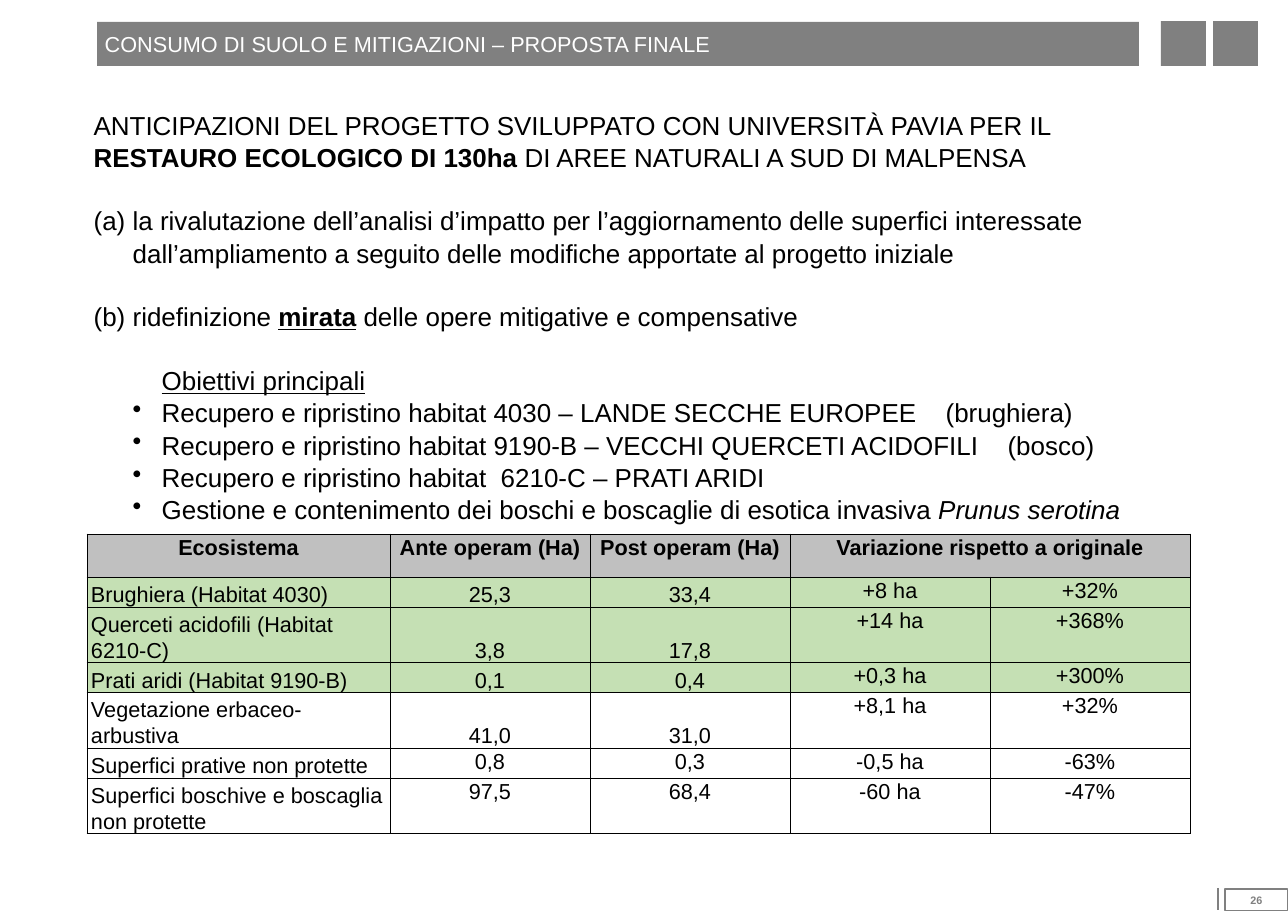
from lxml.etree import SubElement
from pptx import Presentation
from pptx.dml.color import RGBColor
from pptx.enum.shapes import MSO_CONNECTOR, MSO_SHAPE
from pptx.enum.text import MSO_ANCHOR, PP_ALIGN
from pptx.oxml.ns import qn
from pptx.util import Pt

PX = 11738
GREY = RGBColor(0x80, 0x80, 0x80)
SILVER = RGBColor(0xC0, 0xC0, 0xC0)
GREEN = RGBColor(0xC5, 0xE0, 0xB4)
BLACK = RGBColor(0, 0, 0)
WHITE = RGBColor(0xFF, 0xFF, 0xFF)

BODY_SIZE = 24
BODY_SPACING = 1.04
BLANK_LINE = Pt(28.8)
LETTER_INDENT = 39
BULLET_INDENT = 68
BULLET_HANG = 29

BOLD = {"bold": True}
UNDERLINE = {"underline": True}
ITALIC = {"italic": True}

INTRO = [
    ("ANTICIPAZIONI DEL PROGETTO SVILUPPATO CON UNIVERSITÀ PAVIA PER IL", {}),
    ("\n", {}),
    ("RESTAURO ECOLOGICO DI 130ha ", BOLD),
    ("DI AREE NATURALI A SUD DI MALPENSA", {}),
]
LETTERED = [
    [("la rivalutazione dell’analisi d’impatto per l’aggiornamento delle superfici interessate "
      "dall’ampliamento a seguito delle modifiche apportate al progetto iniziale", {})],
    [("ridefinizione ", {}), ("mirata", BOLD | UNDERLINE),
     (" delle opere mitigative e compensative", {})],
]
GOALS = [
    ([("Recupero e ripristino habitat 4030 – LANDE SECCHE EUROPEE\t(brughiera)", {})], 852),
    ([("Recupero e ripristino habitat 9190-B – VECCHI QUERCETI ACIDOFILI\t(bosco)", {})], 914),
    ([("Recupero e ripristino habitat  6210-C – PRATI ARIDI", {})], None),
    ([("Gestione e contenimento dei boschi e boscaglie di esotica invasiva ", {}),
      ("Prunus serotina", ITALIC)], None),
]

HEADINGS = ["Ecosistema", "Ante operam (Ha)", "Post operam (Ha)", "Variazione rispetto a originale"]
ECOSYSTEMS = [
    ["Brughiera (Habitat 4030)", "25,3", "33,4", "+8 ha", "+32%"],
    ["Querceti acidofili (Habitat 6210-C)", "3,8", "17,8", "+14 ha", "+368%"],
    ["Prati aridi (Habitat 9190-B)", "0,1", "0,4", "+0,3 ha", "+300%"],
    ["Vegetazione erbaceo-arbustiva", "41,0", "31,0", "+8,1 ha", "+32%"],
    ["Superfici prative non protette", "0,8", "0,3", "-0,5 ha", "-63%"],
    ["Superfici boschive e boscaglia non protette", "97,5", "68,4", "-60 ha", "-47%"],
]
GREEN_ROWS = 3
BOTTOM_ROWS = 4
COLUMNS = [303, 200, 200, 200, 200]
ROWS = [43] + [30] * len(ECOSYSTEMS)


def px(*values):
    return [value * PX for value in values]


def add_run(p, text, size, color=BLACK, **style):
    r = p.add_run()
    r.text = text
    for name, value in {"name": "Arial", "size": Pt(size), **style}.items():
        setattr(r.font, name, value)
    r.font.color.rgb = color


def add_box(s, box, fill=None, line=None):
    sp = s.shapes.add_shape(MSO_SHAPE.RECTANGLE, *px(*box))
    sp.shadow.inherit = False
    if fill is None:
        sp.fill.background()
    else:
        sp.fill.solid()
        sp.fill.fore_color.rgb = fill
    if line is None:
        sp.line.fill.background()
    else:
        sp.line.color.rgb = line
        sp.line.width = Pt(1)
    return sp


def add_label(sp, text, align, size, color, **style):
    tf = sp.text_frame
    tf.vertical_anchor = MSO_ANCHOR.MIDDLE
    p = tf.paragraphs[0]
    p.alignment = align
    add_run(p, text, size, color, **style)


def add_rule(s, *ends):
    line = s.shapes.add_connector(MSO_CONNECTOR.STRAIGHT, *px(*ends))
    line.line.color.rgb = GREY
    line.line.width = Pt(1)
    SubElement(line._element.spPr, qn("a:effectLst"))


def add_paragraph(tf, runs, left=0, hang=0, before=0, bullet=None, tab=None):
    p = tf.add_paragraph() if tf.paragraphs[0].runs else tf.paragraphs[0]
    p.line_spacing = BODY_SPACING
    p.space_before = before
    pPr = p._p.get_or_add_pPr()
    pPr.set("marL", str(left * PX))
    pPr.set("indent", str(-hang * PX))
    if bullet:
        tag, attributes = bullet
        SubElement(pPr, qn(tag), attributes)
    if tab:
        stops = SubElement(pPr, qn("a:tabLst"))
        SubElement(stops, qn("a:tab"), {"pos": str(tab * PX), "algn": "l"})
    for text, style in runs:
        if text == "\n":
            p.add_line_break()
        else:
            add_run(p, text, BODY_SIZE, **style)


def add_body(s):
    tf = s.shapes.add_textbox(*px(86, 104, 1117, 480)).text_frame
    tf.word_wrap = True
    add_paragraph(tf, INTRO)
    for number, runs in enumerate(LETTERED, 1):
        letter = ("a:buAutoNum", {"type": "alphaLcParenBoth", "startAt": str(number)})
        add_paragraph(tf, runs, LETTER_INDENT, LETTER_INDENT, BLANK_LINE, letter)
    add_paragraph(tf, [("Obiettivi principali", UNDERLINE)], BULLET_INDENT, before=BLANK_LINE)
    for runs, tab in GOALS:
        dot = ("a:buChar", {"char": "•"})
        add_paragraph(tf, runs, BULLET_INDENT, BULLET_HANG, bullet=dot, tab=tab)


def add_borders(cell):
    tcPr = cell._tc.get_or_add_tcPr()
    for position, side in enumerate(("a:lnL", "a:lnR", "a:lnT", "a:lnB")):
        line = tcPr.makeelement(qn(side), {"w": str(Pt(1))})
        fill = SubElement(line, qn("a:solidFill"))
        SubElement(fill, qn("a:srgbClr"), {"val": str(BLACK)})
        tcPr.insert(position, line)


def format_cell(cell, text, fill, align, anchor, bold):
    margins = dict.fromkeys(("margin_left", "margin_right"), 4 * PX)
    margins |= dict.fromkeys(("margin_top", "margin_bottom"), 0)
    for name, value in {**margins, "vertical_anchor": anchor}.items():
        setattr(cell, name, value)
    if fill is None:
        cell.fill.background()
    else:
        cell.fill.solid()
        cell.fill.fore_color.rgb = fill
    add_borders(cell)
    p = cell.text_frame.paragraphs[0]
    p.alignment = align
    p.line_spacing = 1.07
    if text:
        add_run(p, text, 20, bold=bold)


def add_ecosystem_table(s):
    frame = s.shapes.add_table(len(ROWS), len(COLUMNS), *px(87, 534, sum(COLUMNS), sum(ROWS)))
    table = frame.table
    table.first_row = table.horz_banding = False
    for column, width in zip(table.columns, COLUMNS):
        column.width = width * PX
    for row, height in zip(table.rows, ROWS):
        row.height = height * PX
    for i, texts in enumerate([HEADINGS + [""]] + ECOSYSTEMS):
        header = i == 0
        fill = SILVER if header else GREEN if i <= GREEN_ROWS else None
        for j, text in enumerate(texts):
            low = not header and (j == 0 or (j < 3 and i <= BOTTOM_ROWS))
            anchor = MSO_ANCHOR.BOTTOM if low else MSO_ANCHOR.TOP
            align = PP_ALIGN.LEFT if j == 0 and not header else PP_ALIGN.CENTER
            format_cell(table.cell(i, j), text, fill, align, anchor, header)
    table.cell(0, 3).merge(table.cell(0, 4))


def main():
    prs = Presentation()
    prs.slide_width, prs.slide_height = px(1288, 911)
    s = prs.slides.add_slide(prs.slide_layouts[6])
    page = add_box(s, (1225, 889, 63, 22), line=GREY)
    add_label(page, "26", PP_ALIGN.CENTER, 10, GREY, bold=True)
    add_rule(s, 1218, 888, 1218, 910)
    title = add_box(s, (97, 22, 1042, 44), fill=GREY)
    add_label(title, "CONSUMO DI SUOLO E MITIGAZIONI – PROPOSTA FINALE", PP_ALIGN.LEFT, 20, WHITE)
    for left in (1161, 1213):
        add_box(s, (left, 21, 45, 45), fill=GREY)
    add_body(s)
    add_ecosystem_table(s)
    prs.save("out.pptx")


if __name__ == "__main__":
    main()
